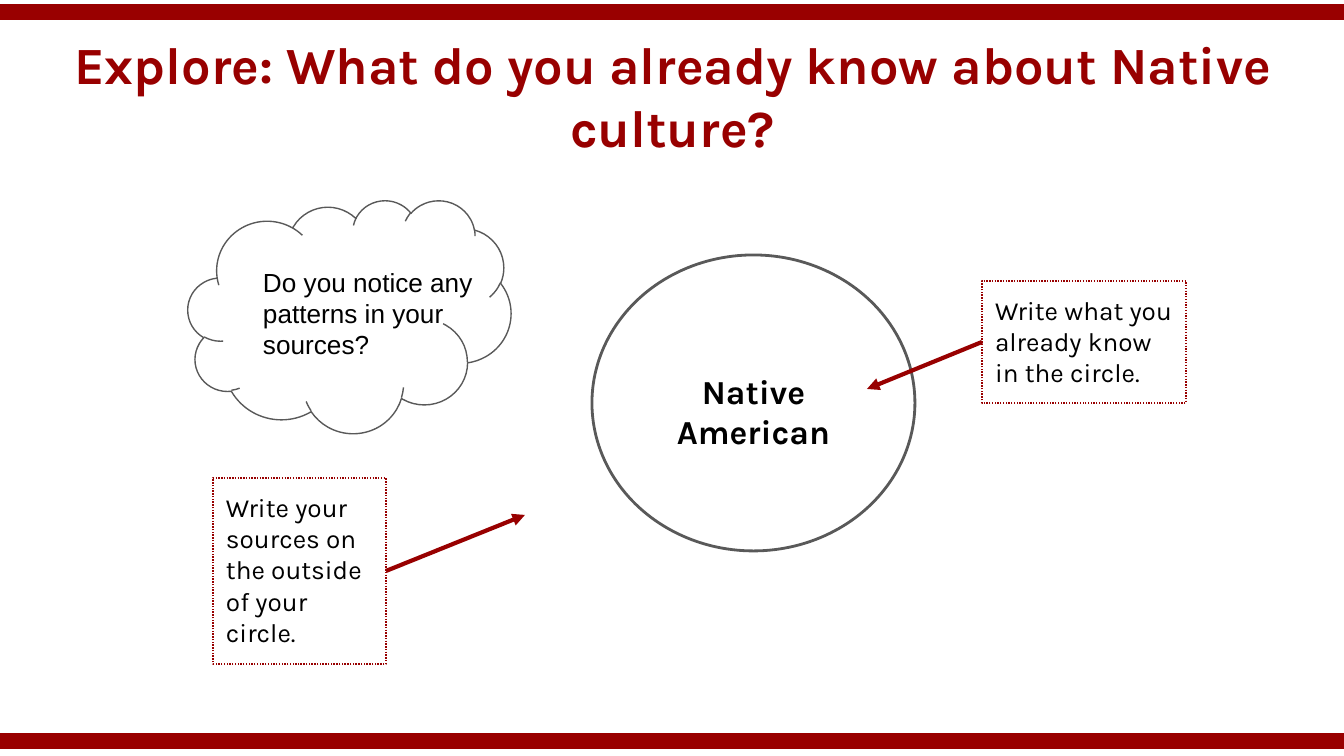
from lxml import etree
from pptx import Presentation
from pptx.dml.color import RGBColor
from pptx.enum.dml import MSO_LINE
from pptx.enum.shapes import MSO_CONNECTOR, MSO_SHAPE
from pptx.enum.text import MSO_ANCHOR, PP_ALIGN
from pptx.oxml.ns import qn
from pptx.util import Emu, Pt

STRAIGHT = MSO_CONNECTOR.STRAIGHT
RECTANGLE, OVAL, CLOUD = MSO_SHAPE.RECTANGLE, MSO_SHAPE.OVAL, MSO_SHAPE.CLOUD
LEFT, CENTER = PP_ALIGN.LEFT, PP_ALIGN.CENTER
TOP, MIDDLE = MSO_ANCHOR.TOP, MSO_ANCHOR.MIDDLE
DOTTED = MSO_LINE.ROUND_DOT
LEFT_SIDE, RIGHT_SIDE = 1, 3

WIDTH, HEIGHT = 1344, 756
EMU_PER_PX = 914400 / 134.4
INSET = 13
COLORS = {"bar": "990000", "red": "980000", "gray": "595959",
          "black": "000000", "white": "FFFFFF"}


def px(length):
    return Emu(round(length * EMU_PER_PX))


def color(name):
    return RGBColor.from_string(COLORS[name])


def write(shape, text, font="Karla", size=14, ink="black", bold=False,
          align=LEFT, anchor=TOP):
    frame = shape.text_frame
    frame.word_wrap = True
    frame.vertical_anchor = anchor
    frame.margin_left = frame.margin_right = px(INSET)
    frame.margin_top = frame.margin_bottom = px(INSET)
    para = frame.paragraphs[0]
    para.alignment = align
    span = para.add_run()
    span.text = text
    span.font.name = font
    span.font.size = Pt(size)
    span.font.bold = bold
    span.font.color.rgb = color(ink)


class SlideBuilder:
    def __init__(self, deck):
        self.slide = deck.slides.add_slide(deck.slide_layouts[6])
        self.shapes = self.slide.shapes

    def text(self, left, top, width, height, text, **style):
        box = self.shapes.add_textbox(px(left), px(top), px(width), px(height))
        write(box, text, **style)

    def shape(self, kind, left, top, width, height, line, weight, fill=None):
        shape = self.shapes.add_shape(kind, px(left), px(top), px(width), px(height))
        shape.shadow.inherit = False
        if fill:
            shape.fill.solid()
            shape.fill.fore_color.rgb = color(fill)
        else:
            shape.fill.background()
        shape.line.color.rgb = color(line)
        shape.line.width = Pt(weight)
        return shape

    def line(self, start, end, ink, weight):
        line = self.shapes.add_connector(STRAIGHT, *map(px, start + end))
        line.line.color.rgb = color(ink)
        line.line.width = Pt(weight)
        etree.SubElement(line._element.spPr, qn("a:effectLst"))
        return line

    def note(self, left, top, width, height, text, side, tip):
        note = self.shape(RECTANGLE, left, top, width, height, "red", 0.75)
        note.line.dash_style = DOTTED
        write(note, text)
        start = (left + (width if side == RIGHT_SIDE else 0), top + height // 2)
        arrow = self.line(start, tip, "red", 2.25)
        arrow.begin_connect(note, side)
        etree.SubElement(arrow.line._get_or_add_ln(), qn("a:tailEnd"), type="triangle")


def main():
    deck = Presentation()
    deck.slide_width, deck.slide_height = px(WIDTH), px(HEIGHT)
    page = SlideBuilder(deck)

    for y in (12, 741):
        page.line((0, y), (WIDTH, y), "bar", 9)
    page.text(46, 23, 1253, 145,
              "Explore: What do you already know about Native culture?",
              size=28, ink="red", bold=True, align=CENTER, anchor=MIDDLE)

    page.shape(OVAL, 592, 255, 323, 296, "gray", 1.5, fill="white")
    page.text(658, 358, 191, 109, "Native American", size=18, bold=True, align=CENTER)

    page.text(250, 253, 269, 153, "Do you notice any patterns in your sources?",
              font="Arial")
    page.note(982, 281, 204, 122, "Write what you already know in the circle.",
              LEFT_SIDE, (867, 389))
    page.note(213, 478, 173, 186, "Write your sources on the outside of your circle.",
              RIGHT_SIDE, (525, 515))
    page.shape(CLOUD, 188, 200, 323, 233, "gray", 0.75)

    deck.save("out.pptx")


if __name__ == "__main__":
    main()
